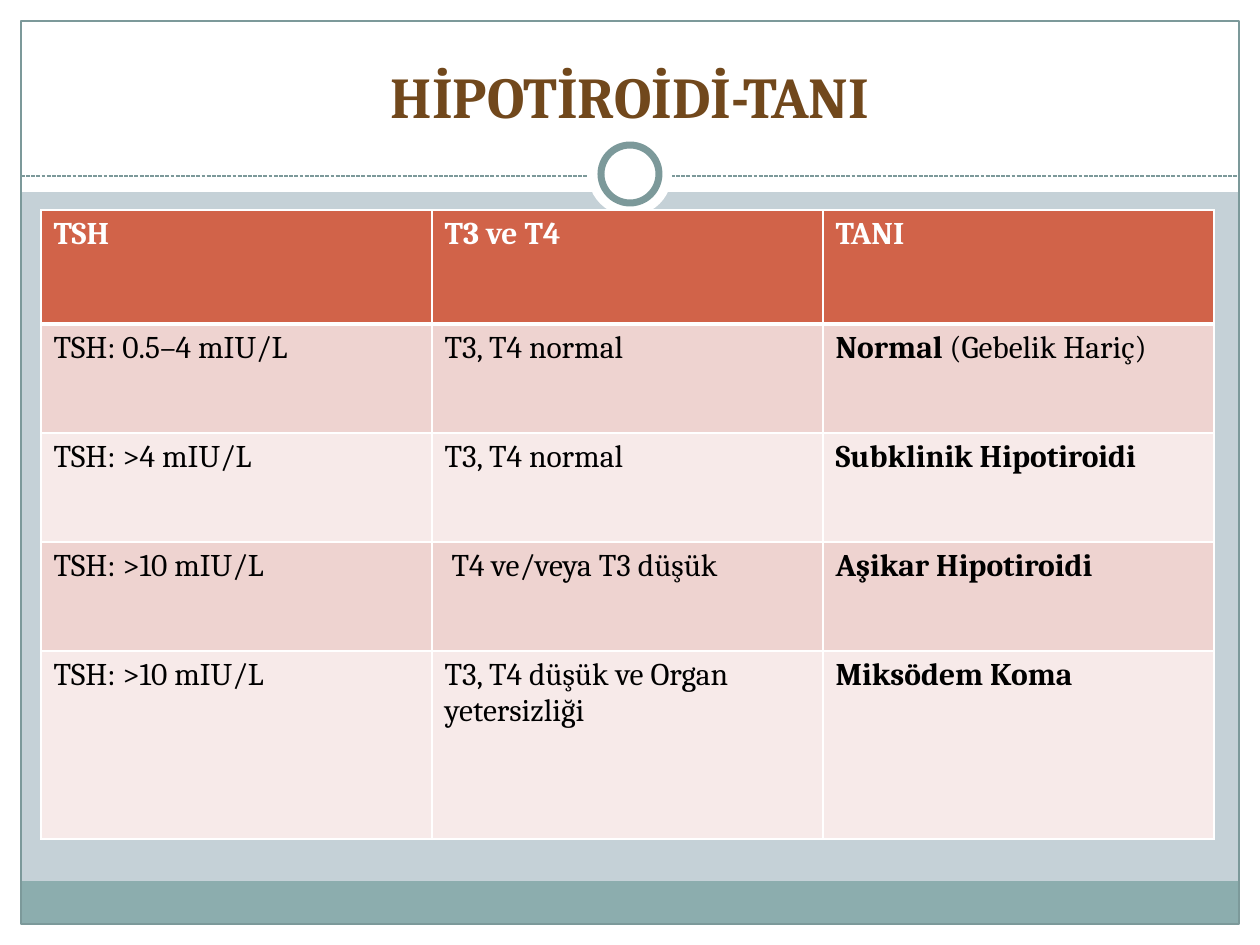
from lxml import etree
from pptx import Presentation
from pptx.dml.color import RGBColor
from pptx.enum.dml import MSO_LINE
from pptx.enum.shapes import MSO_CONNECTOR, MSO_SHAPE
from pptx.enum.text import MSO_ANCHOR, PP_ALIGN
from pptx.oxml.ns import qn
from pptx.util import Emu, Pt

RECT, OVAL = MSO_SHAPE.RECTANGLE, MSO_SHAPE.OVAL
STRAIGHT = MSO_CONNECTOR.STRAIGHT
DASH = MSO_LINE.SQUARE_DOT
CENTER, BOTTOM = PP_ALIGN.CENTER, MSO_ANCHOR.BOTTOM

WHITE = RGBColor(0xFF, 0xFF, 0xFF)
BLACK = RGBColor(0x00, 0x00, 0x00)
BACKDROP = RGBColor(0xC5, 0xD1, 0xD7)
FOOTER = RGBColor(0x8C, 0xAD, 0xAE)
FRAME = RGBColor(0x7C, 0x99, 0x9A)
BROWN = RGBColor(0x71, 0x48, 0x1C)
HEADER = RGBColor(0xD1, 0x63, 0x49)
BANDS = (RGBColor(0xF7, 0xEA, 0xE9), RGBColor(0xEE, 0xD3, 0xD0))
FONT = "Cambria"
W, H, EDGE = 1260, 945, 21


def px(n):
    return Emu(round(n * 914400 / 126))


def add_border(cell, side, width):
    """Draw a white border on side L, R, T or B, before the fill is set."""
    ln = etree.SubElement(cell._tc.get_or_add_tcPr(), qn(f"a:ln{side}"), w=str(Pt(width)))
    fill = etree.SubElement(ln, qn("a:solidFill"))
    etree.SubElement(fill, qn("a:srgbClr"), val=str(WHITE))


prs = Presentation()
prs.slide_width, prs.slide_height = px(W), px(H)
slide = prs.slides.add_slide(prs.slide_layouts[6])
slide.background.fill.solid()
slide.background.fill.fore_color.rgb = BACKDROP

# Margins, footer band, frame and title ornament
backdrop_shapes = [
    (RECT, 0, H - EDGE, W, EDGE, WHITE, None),
    (RECT, 0, 0, W, 192, WHITE, None),
    (RECT, 0, 0, EDGE, H, WHITE, None),
    (RECT, W - EDGE, 0, EDGE, H, WHITE, None),
    (RECT, EDGE, 881, W - 2 * EDGE, 43, FOOTER, None),
    (RECT, EDGE, EDGE, W - 2 * EDGE, H - 2 * EDGE, None, 0.75),
    (OVAL, 588, 132, 84, 84, WHITE, None),
    (OVAL, 601, 145, 58, 58, WHITE, 4),
]
for kind, x, y, w, h, fill, line in backdrop_shapes:
    if kind == OVAL and line is None:
        rule = slide.shapes.add_connector(STRAIGHT, px(EDGE), px(176), px(W - EDGE), px(176))
        rule.line.color.rgb = FRAME
        rule.line.width = Pt(0.75)
        rule.line.dash_style = DASH
        etree.SubElement(rule._element.spPr, qn("a:effectLst"))
    sp = slide.shapes.add_shape(kind, px(x), px(y), px(w), px(h))
    sp.shadow.inherit = False
    if fill is None:
        sp.fill.background()
    else:
        sp.fill.solid()
        sp.fill.fore_color.rgb = fill
    if line is None:
        sp.line.fill.background()
    else:
        sp.line.color.rgb = FRAME
        sp.line.width = Pt(line)

# Title
title = slide.shapes.add_textbox(px(42), px(32), px(1176), px(104))
tf = title.text_frame
tf.word_wrap = True
tf.vertical_anchor = BOTTOM
p = tf.paragraphs[0]
p.text = "HİPOTİROİDİ-TANI"
p.alignment = CENTER
p.font.name, p.font.size, p.font.bold = FONT, Pt(33), True
p.font.color.rgb = BROWN

# Diagnosis table: the last column is a bold diagnosis and a plain remark
rows = [
    ("TSH", "T3 ve T4", "TANI", ""),
    ("TSH: 0.5–4 mIU/L", "T3, T4 normal", "Normal ", "(Gebelik Hariç)"),
    ("TSH: >4 mIU/L", "T3, T4 normal", "Subklinik Hipotiroidi", ""),
    ("TSH: >10 mIU/L", " T4 ve/veya T3 düşük", "Aşikar Hipotiroidi", ""),
    ("TSH: >10 mIU/L", "T3, T4 düşük ve Organ yetersizliği", "Miksödem Koma", ""),
]
row_heights = [114, 109, 109, 109, 188]
col_width = 391
table = slide.shapes.add_table(
    len(rows), 3, px(41), px(210), px(3 * col_width), px(sum(row_heights))).table
for col in table.columns:
    col.width = px(col_width)

for i, (tsh, hormones, diagnosis, remark) in enumerate(rows):
    table.rows[i].height = px(row_heights[i])
    for j, text in enumerate((tsh, hormones, diagnosis)):
        cell = table.cell(i, j)
        for side in "LRTB":
            under_header = (i, side) in ((0, "B"), (1, "T"))
            add_border(cell, side, 3 if under_header else 1)
        cell.fill.solid()
        cell.fill.fore_color.rgb = BANDS[i % 2] if i else HEADER
        p = cell.text_frame.paragraphs[0]
        p.font.name, p.font.size = FONT, Pt(18)
        p.font.color.rgb = BLACK if i else WHITE
        p.font.bold = i == 0 or j == 2
        p.add_run().text = text
        if j == 2 and remark:
            r = p.add_run()
            r.text = remark
            r.font.bold = False

prs.save("out.pptx")
